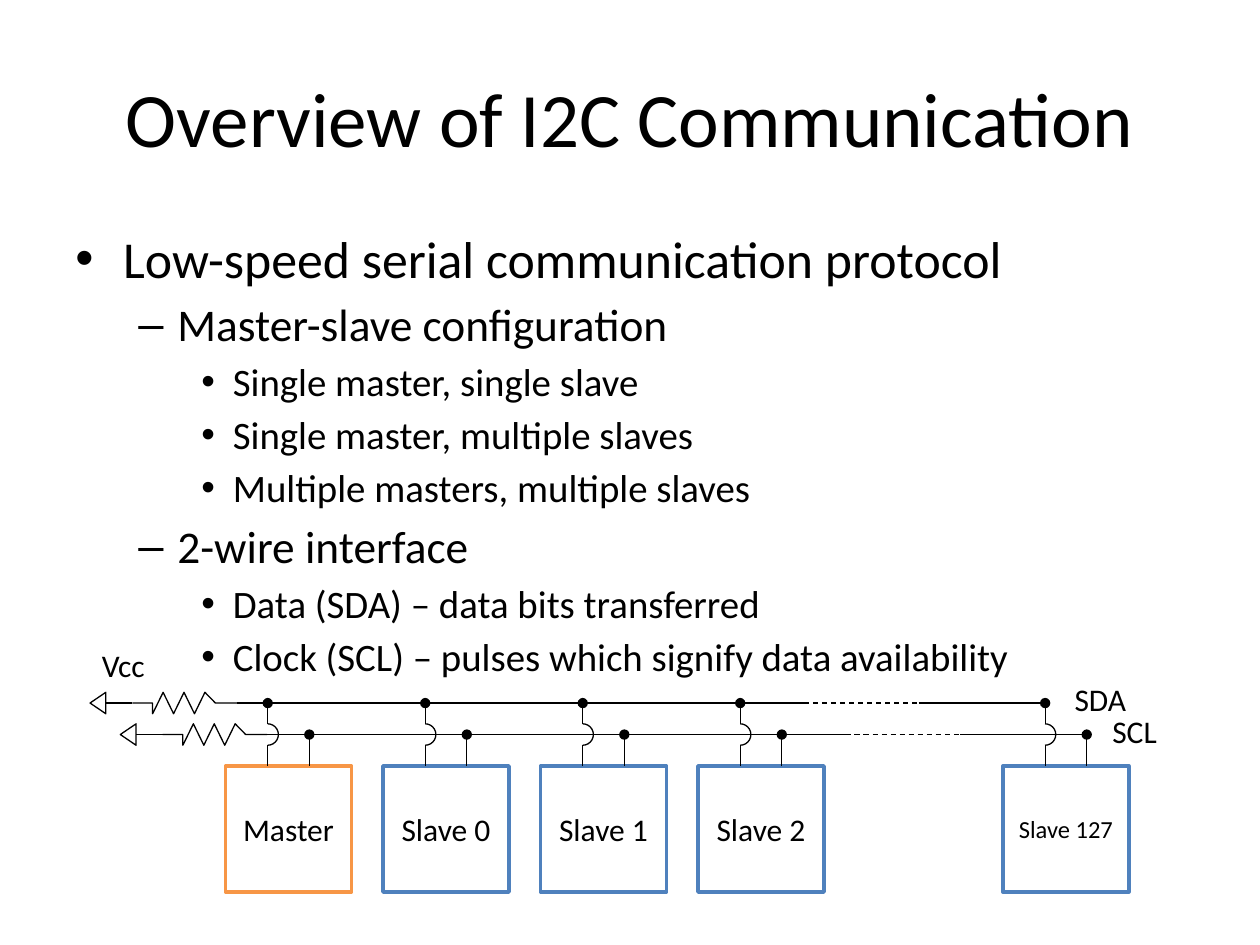
from lxml import etree
from pptx import Presentation
from pptx.dml.color import RGBColor
from pptx.enum.dml import MSO_LINE
from pptx.enum.shapes import MSO_CONNECTOR as CONN, MSO_SHAPE as SHAPE
from pptx.enum.text import MSO_ANCHOR as ANCHOR, PP_ALIGN as ALIGN
from pptx.oxml.ns import qn
from pptx.util import Inches, Pt

COLORS = {"black": "000000", "white": "FFFFFF", "master": "F79646", "slave": "4F81BD"}
FONT = "Calibri"
# Per outline level: font size, left margin, hanging indent, bullet
LEVELS = [(29.6, 0.38, 0.38, "•"), (25.9, 0.81, 0.31, "–"), (22.2, 1.25, 0.25, "•")]
SPACE_BEFORE = 0.17
OUTLINE = [
    (0, "Low-speed serial communication protocol"),
    (1, "Master-slave configuration"),
    (2, "Single master, single slave"),
    (2, "Single master, multiple slaves"),
    (2, "Multiple masters, multiple slaves"),
    (1, "2-wire interface"),
    (2, "Data (SDA) – data bits transferred"),
    (2, "Clock (SCL) – pulses which signify data availability"),
]
DEVICES = [
    ("Master", 1.79, "master", 18),
    ("Slave 0", 3.04, "slave", 18),
    ("Slave 1", 4.29, "slave", 18),
    ("Slave 2", 5.54, "slave", 18),
    ("Slave 127", 7.96, "slave", 14),
]
SDA_Y, SCL_Y, BOX_Y, BOX_SIZE = 5.58, 5.83, 6.08, 1
SDA_DX, SCL_DX = 0.335, 0.665
HOP = 0.085


def rgb(name):
    return RGBColor.from_string(COLORS[name])


def set_format(target, values):
    for name, value in values.items():
        setattr(target, name, value)


def write(p, text, size):
    r = p.add_run()
    r.text = text
    set_format(r.font, {"name": FONT, "size": Pt(size)})
    r.font.color.rgb = rgb("black")


def add_text(shapes, text, box, size, **frame):
    tf = shapes.add_textbox(*map(Inches, box)).text_frame
    set_format(tf, frame)
    write(tf.paragraphs[0], text, size)
    return tf


def add_outline(shapes, box):
    tf = shapes.add_textbox(*map(Inches, box)).text_frame
    tf.word_wrap = True
    for i, (level, text) in enumerate(OUTLINE):
        size, margin, hang, bullet = LEVELS[level]
        p = tf.add_paragraph() if i else tf.paragraphs[0]
        set_format(p, {"level": level, "space_before": Pt(round(size * SPACE_BEFORE, 1))})
        pPr = p._p.get_or_add_pPr()
        pPr.set("marL", str(Inches(margin)))
        pPr.set("indent", str(-Inches(hang)))
        etree.SubElement(pPr, qn("a:buFont")).set("typeface", "Arial")
        etree.SubElement(pPr, qn("a:buChar")).set("char", bullet)
        write(p, text, size)


def set_line(shape, color="black", width=0.75):
    shape.line.color.rgb = rgb(color)
    shape.line.width = Pt(width)


def add_wire(shapes, start, end, dashed=False, dot=False):
    wire = shapes.add_connector(CONN.STRAIGHT, *map(Inches, start + end))
    set_line(wire)
    if dashed:
        wire.line.dash_style = MSO_LINE.DASH
    if dot:
        etree.SubElement(wire.line._get_or_add_ln(), qn("a:tailEnd")).set("type", "oval")
    etree.SubElement(wire._element.spPr, qn("a:effectLst"))


def add_path(shapes, points, close=False):
    points = [(Inches(x), Inches(y)) for x, y in points]
    builder = shapes.build_freeform(*points[0])
    builder.add_line_segments(points[1:], close=close)
    shape = builder.convert_to_shape()
    shape.shadow.inherit = False
    shape.fill.background()
    set_line(shape)


def add_pull_up(shapes, right, y):
    """Resistor ending at right, with a lead to the supply arrow."""
    zigzag = [(-0.21 - 0.083 * i, 0.085 if i % 2 else -0.085) for i in range(1, 7)]
    zigzag = [(dx + 0.04, -dy) for dx, dy in zigzag]
    offsets = [(0, 0), (-0.17, 0), *[(dx, -dy) for dx, dy in zigzag], (-0.67, 0), (-0.83, 0)]
    add_path(shapes, [(right + dx, y - dy) for dx, dy in offsets])
    add_wire(shapes, (right - 0.83, y), (right - 1.04, y))
    back = right - 1.04
    add_path(shapes, [(back - 0.125, y), (back, y + HOP), (back, y - HOP)], close=True)


def add_bus(shapes, y, stops):
    """Solid, dashed and solid stretches between four stops."""
    for i, (x1, x2) in enumerate(zip(stops, stops[1:])):
        add_wire(shapes, (x1, y), (x2, y), dashed=i == 1)


def add_device(shapes, label, left, color, size):
    box = shapes.add_shape(SHAPE.RECTANGLE, *map(Inches, (left, BOX_Y, BOX_SIZE, BOX_SIZE)))
    box.shadow.inherit = False
    box.fill.solid()
    box.fill.fore_color.rgb = rgb("white")
    set_line(box, color, 2)
    tf = box.text_frame
    set_format(tf, {"word_wrap": True, "vertical_anchor": ANCHOR.MIDDLE})
    tf.paragraphs[0].alignment = ALIGN.CENTER
    write(tf.paragraphs[0], label, size)


def add_taps(shapes, left):
    """Connect a device to both wires; the SDA tap hops over SCL."""
    sda, scl = left + SDA_DX, left + SCL_DX
    add_wire(shapes, (sda, BOX_Y), (sda, SCL_Y + HOP))
    arc = shapes.add_shape(
        SHAPE.ARC, *map(Inches, (sda - HOP, SCL_Y - HOP, 2 * HOP, 2 * HOP)))
    arc.adjustments[0], arc.adjustments[1] = 162, 54
    arc.shadow.inherit = False
    arc.fill.background()
    set_line(arc)
    add_wire(shapes, (sda, SCL_Y - HOP), (sda, SDA_Y), dot=True)
    add_wire(shapes, (scl, BOX_Y), (scl, SCL_Y), dot=True)


def main():
    prs = Presentation()
    prs.slide_width, prs.slide_height = Inches(10), Inches(7.5)
    s = prs.slides.add_slide(prs.slide_layouts[6])
    title = add_text(s.shapes, "Overview of I2C Communication", (0.5, 0.3, 9, 1.25), 44,
                     word_wrap=True, vertical_anchor=ANCHOR.MIDDLE)
    title.paragraphs[0].alignment = ALIGN.CENTER
    add_outline(s.shapes, (0.5, 1.75, 9, 3.67))

    circuit = s.shapes.add_group_shape().shapes
    for device in DEVICES:
        add_device(circuit, *device)
    add_bus(circuit, SDA_Y, (1.88, 6.38, 7.29, 8.29))
    add_bus(circuit, SCL_Y, (2.12, 6.71, 7.62, 8.62))
    add_pull_up(circuit, 1.88, SDA_Y)
    add_pull_up(circuit, 2.12, SCL_Y)
    for _, left, _, _ in DEVICES:
        add_taps(circuit, left)
    for text, left, top, width in [("SDA", 8.43, 5.35, 0.62), ("SCL", 8.73, 5.6, 0.56),
                                   ("Vcc", 0.71, 5.08, 0.55)]:
        add_text(circuit, text, (left, top, width, 0.4), 18, word_wrap=False)
    prs.save("out.pptx")


if __name__ == "__main__":
    main()
